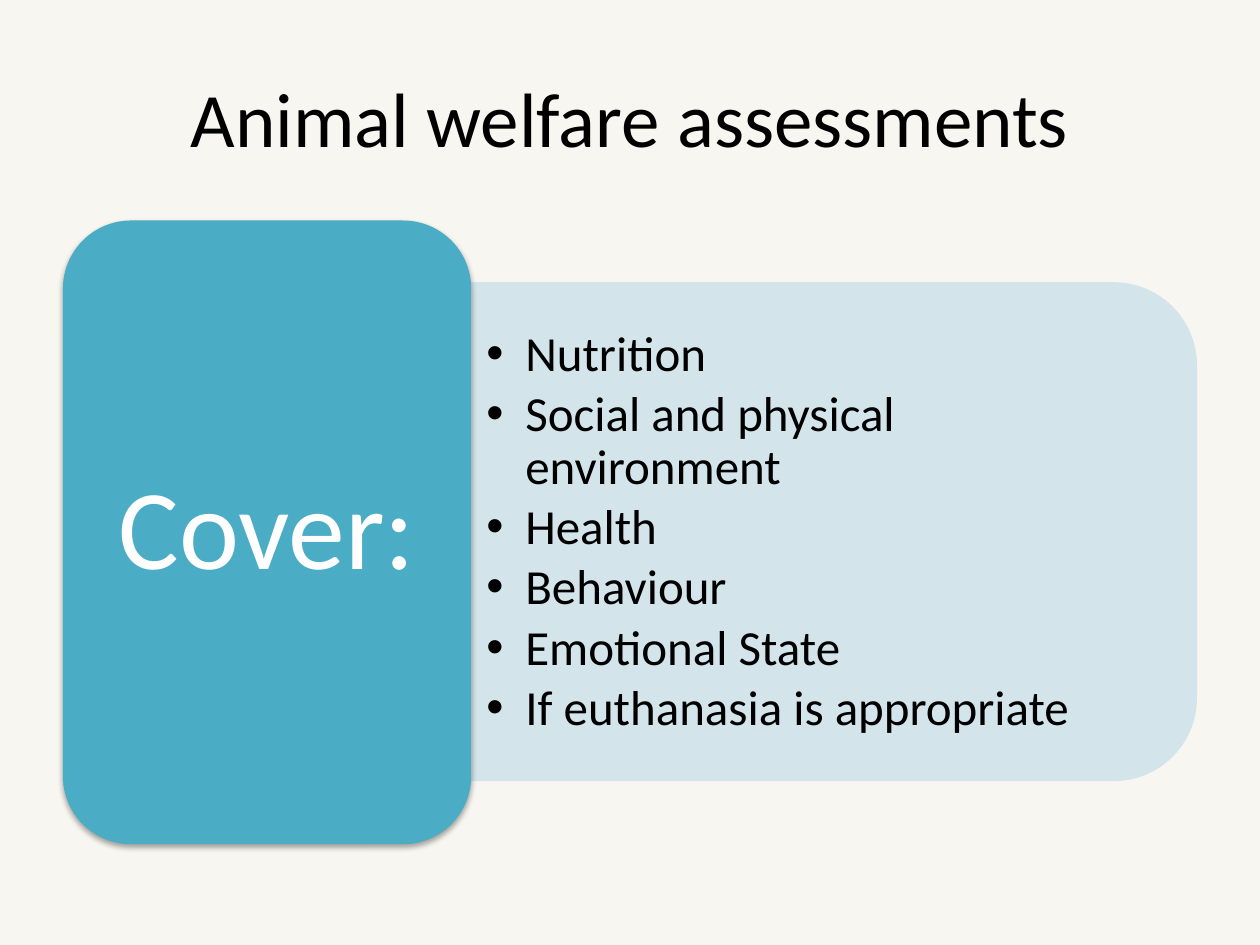
from dataclasses import dataclass

from lxml import etree
from pptx import Presentation
from pptx.dml.color import RGBColor
from pptx.enum import shapes, text
from pptx.oxml import ns
from pptx.util import Inches, Pt

BACKGROUND = RGBColor(0xF7, 0xF6, 0xF0)
PANEL = RGBColor(0xD0, 0xE3, 0xEA)
TEAL = RGBColor(0x4B, 0xAC, 0xC6)
BLACK = RGBColor(0, 0, 0)
WHITE = RGBColor(0xFF, 0xFF, 0xFF)
FONT = "Calibri"
INDENT = Inches(0.31)


@dataclass
class Box:
    left: float
    top: float
    width: float
    height: float

    def lengths(self) -> list:
        return [Inches(v) for v in (self.left, self.top, self.width, self.height)]


@dataclass
class Label:
    box: Box
    lines: list[str]
    size: float
    color: RGBColor = BLACK
    inset_x: float = 0.1
    inset_y: float = 0.05
    line_spacing: float = 1.0
    space_after: float = 0
    bulleted: bool = False


def add_bullet(p) -> None:
    pPr = p._p.get_or_add_pPr()
    pPr.set("marL", str(INDENT))
    pPr.set("indent", str(-INDENT))
    etree.SubElement(pPr, ns.qn("a:buFont"), typeface="Arial")
    etree.SubElement(pPr, ns.qn("a:buChar"), char="•")


def add_label(s, label: Label) -> None:
    tf = s.shapes.add_textbox(*label.box.lengths()).text_frame
    tf.word_wrap = True
    tf.vertical_anchor = text.MSO_ANCHOR.MIDDLE
    tf.margin_left = tf.margin_right = Inches(label.inset_x)
    tf.margin_top = tf.margin_bottom = Inches(label.inset_y)
    tf.text = "\n".join(label.lines)
    for p in tf.paragraphs:
        if label.bulleted:
            add_bullet(p)
        p.alignment = text.PP_ALIGN.LEFT if label.bulleted else text.PP_ALIGN.CENTER
        p.line_spacing = label.line_spacing
        p.space_after = Pt(label.space_after)
        for r in p.runs:
            r.font.name = FONT
            r.font.size = Pt(label.size)
            r.font.color.rgb = label.color


def add_block(s, kind: shapes.MSO_SHAPE, box: Box, color: RGBColor):
    sp = s.shapes.add_shape(kind, *box.lengths())
    sp.shadow.inherit = False
    sp.fill.solid()
    sp.fill.fore_color.rgb = color
    sp.line.fill.background()
    return sp


def set_alpha(color_element, percent: int) -> None:
    etree.SubElement(color_element, ns.qn("a:alpha"), val=str(percent * 1000))


def add_drop_shadow(sp) -> None:
    effects = sp._element.spPr.find(ns.qn("a:effectLst"))
    shadow = etree.SubElement(
        effects, ns.qn("a:outerShdw"), blurRad=str(Pt(3.1)), dist=str(Pt(1.8)),
        dir=str(90 * 60000), rotWithShape="0")
    set_alpha(etree.SubElement(shadow, ns.qn("a:srgbClr"), val=str(BLACK)), 35)


def main() -> None:
    prs = Presentation()
    prs.slide_width, prs.slide_height = Inches(10), Inches(7.5)
    s = prs.slides.add_slide(prs.slide_layouts[6])
    s.background.fill.solid()
    s.background.fill.fore_color.rgb = BACKGROUND

    # Title
    add_label(s, Label(Box(0.5, 0.3, 9, 1.25), ["Animal welfare assessments"], 44))

    # Pale panel, turned so that its rounded corners face right
    panel = add_block(s, shapes.MSO_SHAPE.ROUND_2_SAME_RECTANGLE,
                      Box(4.64, 1.34, 3.96, 5.76), PANEL)
    panel.rotation = 90
    set_alpha(panel._element.spPr.find(ns.qn("a:solidFill"))[0], 90)

    # Assessment topics
    topics = ["Nutrition", "Social and physical environment", "Health",
              "Behaviour", "Emotional State", "If euthanasia is appropriate"]
    add_label(s, Label(Box(3.74, 2.44, 5.57, 3.57), topics, 28, inset_x=0.12,
                       inset_y=0.06, line_spacing=0.9, space_after=4.2, bulleted=True))

    # Teal heading block
    heading = add_block(s, shapes.MSO_SHAPE.ROUNDED_RECTANGLE,
                        Box(0.5, 1.75, 3.24, 4.95), TEAL)
    add_drop_shadow(heading)
    add_label(s, Label(Box(0.66, 1.91, 2.92, 4.63), ["Cover:"], 65, WHITE, inset_x=0.27,
                       inset_y=0.14, line_spacing=0.9, space_after=22.75))

    prs.save("out.pptx")


if __name__ == "__main__":
    main()
